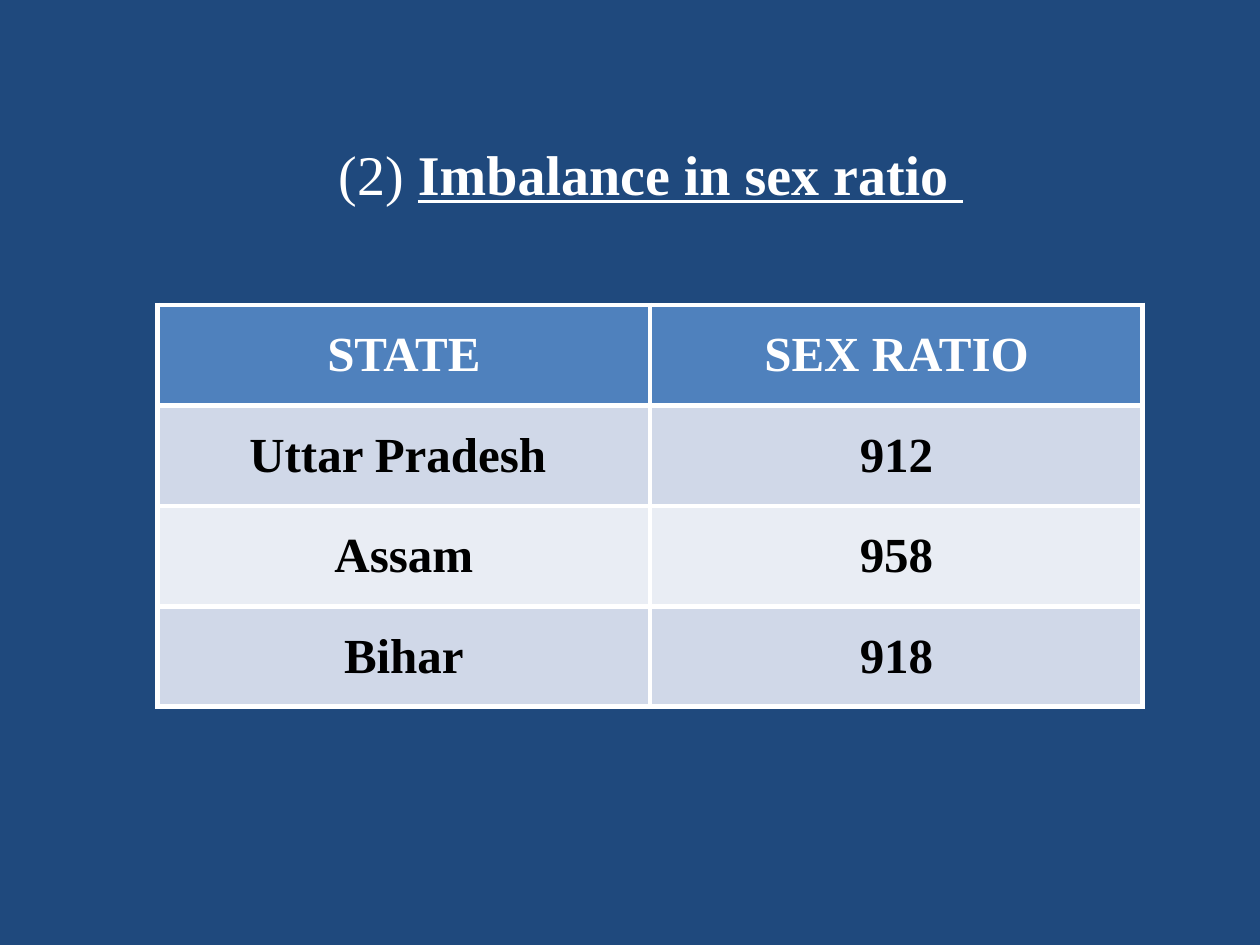
from lxml.etree import SubElement
from pptx import Presentation
from pptx.dml.color import RGBColor
from pptx.enum.text import MSO_ANCHOR, PP_ALIGN
from pptx.oxml.ns import qn
from pptx.util import Inches, Pt

FONT = "Times New Roman"
BACKGROUND, WHITE, BLACK = "1F497D", "FFFFFF", "000000"
HEADER_FILL = "4F81BD"
BAND_FILLS = ["E9EDF4", "D0D8E8"]
TITLE_NUMBER = "(2) "
TITLE_TEXT = "Imbalance in sex ratio "
ROWS = [
    ("STATE", "SEX RATIO"),
    ("Uttar Pradesh ", "912"),
    ("Assam", "958"),
    ("Bihar", "918"),
]


def set_color(target, color):
    target.rgb = RGBColor.from_string(color)


def set_fill(fill, color):
    fill.solid()
    set_color(fill.fore_color, color)


def format_paragraph(paragraph, size, color):
    paragraph.alignment = PP_ALIGN.CENTER
    paragraph.font.name = FONT
    paragraph.font.size = Pt(size)
    set_color(paragraph.font.color, color)


def add_borders(cell, color, width):
    properties = cell._tc.get_or_add_tcPr()
    for side in ("a:lnL", "a:lnR", "a:lnT", "a:lnB"):
        line = SubElement(properties, qn(side), w=str(Pt(width)))
        SubElement(SubElement(line, qn("a:solidFill")), qn("a:srgbClr"), val=color)


def add_title(slide):
    title = slide.shapes.title
    title.left, title.top = Inches(0.5), Inches(0.55)
    title.width, title.height = Inches(9), Inches(1.64)
    frame = title.text_frame
    frame.vertical_anchor = MSO_ANCHOR.MIDDLE
    frame.margin_left = Inches(0.43)
    paragraph = frame.paragraphs[0]
    format_paragraph(paragraph, 32, WHITE)
    paragraph.add_run().text = TITLE_NUMBER
    heading = paragraph.add_run()
    heading.text = TITLE_TEXT
    heading.font.bold = True
    heading.font.underline = True


def add_ratio_table(slide):
    table = slide.shapes.add_table(
        len(ROWS), len(ROWS[0]), Inches(1.25), Inches(2.42), Inches(7.82), Inches(3.19)
    ).table
    for row_index, row in enumerate(ROWS):
        is_header = row_index == 0
        for column_index, text in enumerate(row):
            cell = table.cell(row_index, column_index)
            cell.text = text
            cell.vertical_anchor = MSO_ANCHOR.MIDDLE
            add_borders(cell, WHITE, 3)
            set_fill(cell.fill, HEADER_FILL if is_header else BAND_FILLS[row_index % 2])
            paragraph = cell.text_frame.paragraphs[0]
            format_paragraph(paragraph, 28, WHITE if is_header else BLACK)
            paragraph.font.bold = True


def main():
    presentation = Presentation()
    presentation.slide_width, presentation.slide_height = Inches(10), Inches(7.5)
    slide = presentation.slides.add_slide(presentation.slide_layouts.get_by_name("Title Only"))
    set_fill(slide.background.fill, BACKGROUND)
    add_title(slide)
    add_ratio_table(slide)
    presentation.save("out.pptx")


if __name__ == "__main__":
    main()
